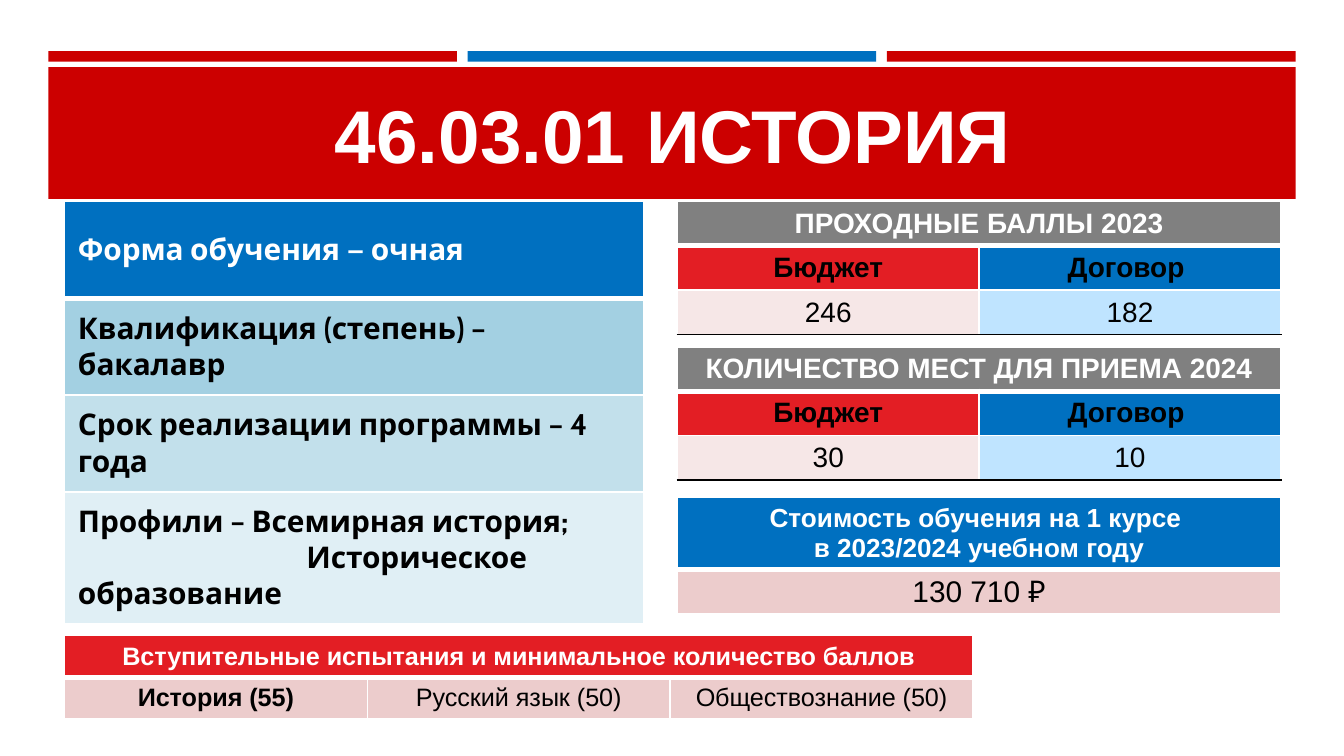
from dataclasses import dataclass

from lxml import etree
from pptx import Presentation
from pptx.dml.color import RGBColor
from pptx.enum.shapes import MSO_SHAPE
from pptx.enum.text import MSO_ANCHOR, PP_ALIGN
from pptx.oxml.ns import qn
from pptx.util import Inches, Pt

RECTANGLE = MSO_SHAPE.RECTANGLE
MIDDLE = MSO_ANCHOR.MIDDLE
LEFT, CENTER = PP_ALIGN.LEFT, PP_ALIGN.CENTER


@dataclass(frozen=True)
class Theme:
    """Colours, fonts and type sizes of the slide."""
    white: str = "FFFFFF"
    black: str = "000000"
    brand_red: str = "CC0000"
    red: str = "E31E24"
    blue: str = "0070C0"
    gray: str = "808080"
    pink: str = "ECCCCC"
    pale_pink: str = "F6E7E7"
    pale_blue: str = "BFE4FF"
    program_tints: tuple = ("A3D0E2", "C2E0EB", "E0EFF5")
    font: str = "Arial"
    program_font: str = "Cabin"
    title_size: float = 40
    program_size: float = 16
    score_size: float = 15
    cost_size: float = 14
    exam_size: float = 13.5


THEME = Theme()


@dataclass(frozen=True)
class Entry:
    """Content and look of one table cell."""
    text: str
    fill: str
    color: str = THEME.black
    bold: bool = True
    size: float = 0
    underline: str = THEME.white


def style_paragraph(paragraph, font, size, color, bold, align):
    """Set the font and alignment of a paragraph."""
    paragraph.alignment = align
    paragraph.font.name = font
    paragraph.font.size = Pt(size)
    paragraph.font.bold = bold
    paragraph.font.color.rgb = RGBColor.from_string(color)


def add_bar(slide, left, top, width, height, color):
    """Add a plain coloured bar behind the title."""
    bar = slide.shapes.add_shape(
        RECTANGLE, Inches(left), Inches(top), Inches(width), Inches(height))
    bar.shadow.inherit = False
    bar.fill.solid()
    bar.fill.fore_color.rgb = RGBColor.from_string(color)
    bar.line.fill.background()
    slide.shapes.title.element.addprevious(bar.element)


def add_title(slide, text):
    """Place and format the title."""
    title = slide.shapes.title
    title.left, title.top = Inches(0.48), Inches(0.58)
    title.width, title.height = Inches(9.05), Inches(0.83)
    title.text_frame.text = text
    title.text_frame.vertical_anchor = MIDDLE
    style_paragraph(title.text_frame.paragraphs[0], THEME.font,
                    THEME.title_size, THEME.white, True, CENTER)


def set_borders(cell, bottom_color, bottom_width):
    """Give a cell thin white borders and its own bottom border."""
    properties = cell._tc.get_or_add_tcPr()
    borders = [(side, THEME.white, 1) for side in ("lnL", "lnR", "lnT")]
    borders.append(("lnB", bottom_color, bottom_width))
    for position, (side, color, width) in enumerate(borders):
        line = etree.Element(qn(f"a:{side}"), w=str(Pt(width)))
        fill = etree.SubElement(line, qn("a:solidFill"))
        etree.SubElement(fill, qn("a:srgbClr"), val=color)
        properties.insert(position, line)


def fill_cell(cell, entry, font, size, align):
    """Write an entry into a cell."""
    cell.fill.solid()
    cell.fill.fore_color.rgb = RGBColor.from_string(entry.fill)
    cell.vertical_anchor = MIDDLE
    cell.margin_left = cell.margin_right = Inches(0.1)
    cell.margin_top = cell.margin_bottom = Inches(0.04)
    cell.text_frame.text = entry.text
    for paragraph in cell.text_frame.paragraphs:
        style_paragraph(paragraph, font, entry.size or size,
                        entry.color, entry.bold, align)


def add_grid(slide, left, top, width, heights, rows, size,
             font=THEME.font, align=CENTER):
    """Add a table whose header spans all of its equal columns."""
    columns = len(rows[-1])
    table = slide.shapes.add_table(
        len(rows), columns, Inches(left), Inches(top),
        Inches(width), Inches(sum(heights))).table
    table.first_row = table.horz_banding = False
    for column in table.columns:
        column.width = Inches(width / columns)
    for row, height in zip(table.rows, heights):
        row.height = Inches(height)
    if columns > 1:
        table.cell(0, 0).merge(table.cell(0, columns - 1))
    for row_index, entries in enumerate(rows):
        for column_index, entry in enumerate(entries):
            fill_cell(table.cell(row_index, column_index), entry, font, size, align)
        for column_index in range(columns):
            set_borders(table.cell(row_index, column_index),
                        entries[0].underline, 1 if row_index else 3)
    return table


def add_program(slide):
    """Add the table that describes the programme."""
    facts = ("Квалификация (степень) – бакалавр",
             "Срок реализации программы – 4 года",
             "Профили – Всемирная история;\nИсторическое образование")
    rows = [[Entry("Форма обучения — очная", THEME.blue, THEME.white)]]
    rows += [[Entry(fact, tint)] for fact, tint in zip(facts, THEME.program_tints)]
    table = add_grid(slide, 0.48, 1.5, 4.31, [0.72, 0.72, 0.72, 0.98], rows,
                     THEME.program_size, THEME.program_font, LEFT)
    second_profile = table.cell(3, 0).text_frame.paragraphs[1]
    second_profile._p.get_or_add_pPr().set("indent", str(Inches(1.7)))


def add_comparison(slide, top, heading, budget, contract):
    """Add a table that compares budget and contract places."""
    rows = [
        [Entry(heading, THEME.gray, THEME.white)],
        [Entry("Бюджет", THEME.red), Entry("Договор ", THEME.blue)],
        [Entry(budget, THEME.pale_pink, bold=False, underline=THEME.black),
         Entry(contract, THEME.pale_blue, bold=False)],
    ]
    add_grid(slide, 5.04, top, 4.49, [0.33] * 3, rows, THEME.score_size)


def add_cost(slide):
    """Add the tuition fee table."""
    rows = [
        [Entry("Стоимость обучения на 1 курсе \nв 2023/2024 учебном году",
               THEME.blue, THEME.white)],
        [Entry("130 710 ₽", THEME.pink, bold=False, size=THEME.program_size)],
    ]
    add_grid(slide, 5.04, 3.7, 4.49, [0.54, 0.33], rows, THEME.cost_size)


def add_exams(slide):
    """Add the table of entrance exams."""
    rows = [
        [Entry("Вступительные испытания и минимальное количество баллов",
               THEME.red, THEME.white)],
        [Entry("История (55)", THEME.pink),
         Entry("Русский язык (50)", THEME.pink, bold=False),
         Entry("Обществознание (50)", THEME.pink, bold=False)],
    ]
    add_grid(slide, 0.48, 4.73, 6.76, [0.31] * 2, rows, THEME.exam_size)


def main():
    """Build the slide and save it."""
    presentation = Presentation()
    presentation.slide_width = Inches(10)
    presentation.slide_height = Inches(10 * 9 / 16)
    slide = presentation.slides.add_slide(presentation.slide_layouts[5])
    for index, color in enumerate((THEME.brand_red, THEME.blue, THEME.brand_red)):
        add_bar(slide, 0.36 + index * 3.12, 0.38, 3.04, 0.08, color)
    add_bar(slide, 0.36, 0.5, 9.28, 0.98, THEME.brand_red)
    add_title(slide, "46.03.01 ИСТОРИЯ")
    add_program(slide)
    add_exams(slide)
    add_comparison(slide, 1.5, "ПРОХОДНЫЕ БАЛЛЫ 2023", "246", "182")
    add_cost(slide)
    add_comparison(slide, 2.58, "КОЛИЧЕСТВО МЕСТ ДЛЯ ПРИЕМА 2024", "30", "10")
    presentation.save("out.pptx")


if __name__ == "__main__":
    main()
